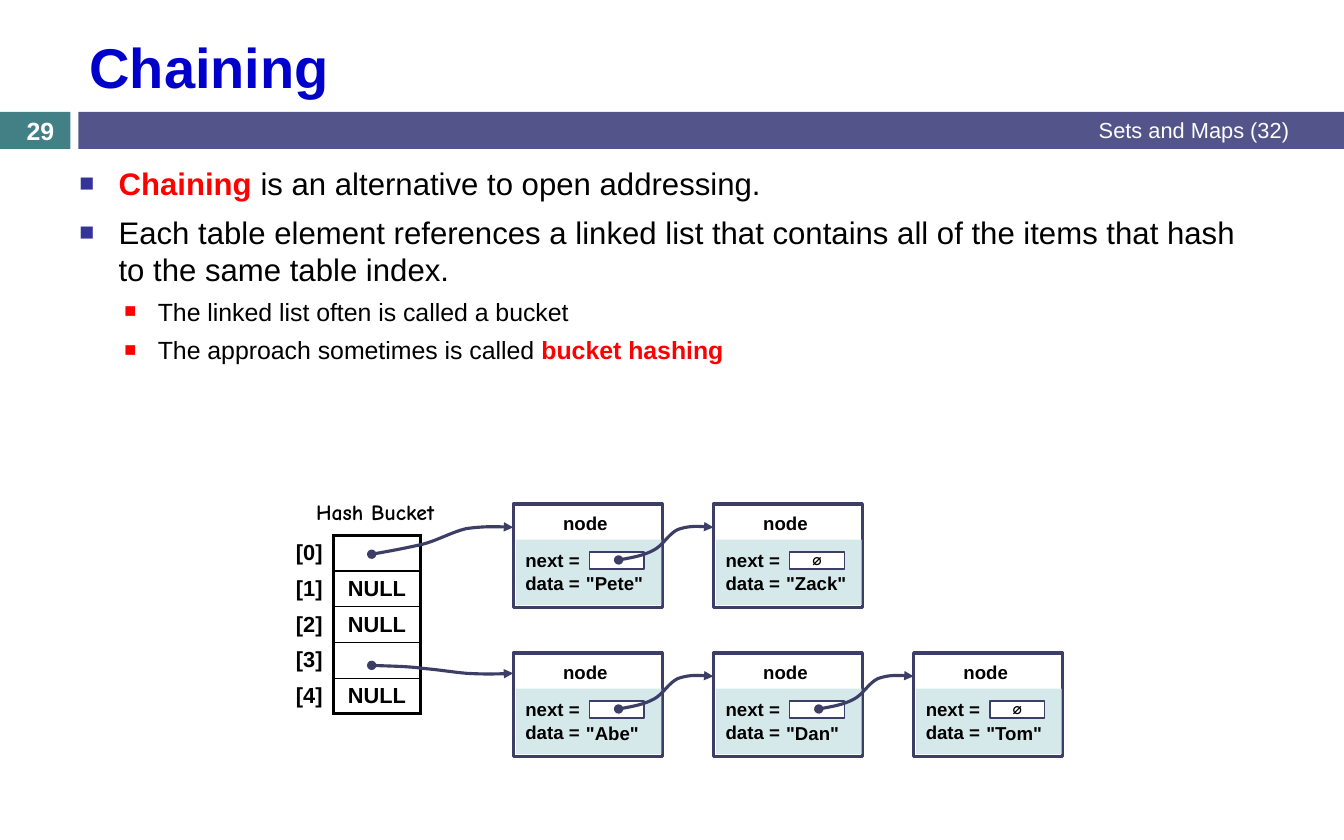
import pptx
import pptx.dml.color
import pptx.enum.shapes
import pptx.enum.text
import pptx.oxml
import pptx.oxml.ns
import pptx.util

Cm, Pt = pptx.util.Cm, pptx.util.Pt
color = pptx.dml.color.RGBColor.from_string
ALIGN = pptx.enum.text.PP_ALIGN
MIDDLE = pptx.enum.text.MSO_ANCHOR.MIDDLE
NS = pptx.oxml.ns.nsdecls("a")
INK = "3D3E66"


def write(paragraph, text, size=12, tint="000000", bold=True, font="Arial", align=None):
    run = paragraph.add_run()
    run.text = text
    run.font.size = Pt(size)
    run.font.bold = bold
    run.font.name = font
    run.font.color.rgb = color(tint)
    if align is not None:
        paragraph.alignment = align


def add_box(x, y, width, height, fill, border=None):
    box = slide.shapes.add_shape(pptx.enum.shapes.MSO_SHAPE.RECTANGLE,
                                 Cm(x), Cm(y), Cm(width), Cm(height))
    box.shadow.inherit = False
    box.fill.solid()
    box.fill.fore_color.rgb = color(fill)
    if border:
        box.line.color.rgb = color(INK)
        box.line.width = Pt(border)
    else:
        box.line.fill.background()


deck = pptx.Presentation()
deck.slide_width, deck.slide_height = Cm(30.48), Cm(19.05)
slide = deck.slides.add_slide(deck.slide_layouts[6])

# Header band
add_box(0, 2.54, 1.6, 0.84, "438086")
add_box(1.78, 2.54, 28.7, 0.84, "53548A")

# Bulleted text: level, then (text, highlighted) runs
bullets = [
    (0, [("Chaining ", True), ("is an alternative to open addressing.", False)]),
    (0, [("Each table element references a linked list that contains all of "
          "the items that hash to the same table index.", False)]),
    (1, [("The linked list often is called a bucket", False)]),
    (1, [("The approach sometimes is called ", False), ("bucket hashing", True)]),
]
# Per level: text size, space before, bullet colour, left margin, hanging indent
levels = [(20, 7, "333399", 0.89, 0.89), (16, 5.5, "FF0000", 1.78, 0.76)]
body = slide.shapes.add_textbox(Cm(1.55), Cm(3.61), Cm(27.23), Cm(5.28)).text_frame
body.word_wrap = True
for index, (level, runs) in enumerate(bullets):
    size, before, bullet_tint, margin, hanging = levels[level]
    point = body.add_paragraph() if index else body.paragraphs[0]
    point.level = level
    point.space_before = Pt(before)
    for text, highlighted in runs:
        write(point, text, size=size, bold=highlighted,
              tint="FF0000" if highlighted else "000000")
    properties = point._p.get_or_add_pPr()
    properties.set("marL", str(Cm(margin)))
    properties.set("indent", str(-Cm(hanging)))
    for xml in (f'<a:buClr {NS}><a:srgbClr val="{bullet_tint}"/></a:buClr>',
                f'<a:buSzPct {NS} val="80000"/>',
                f'<a:buFont {NS} typeface="Arial"/>',
                f'<a:buChar {NS} char="■"/>'):
        properties.append(pptx.oxml.parse_xml(xml))

# Hash table
slots = ["", "NULL", "NULL", "", "NULL"]
table = slide.shapes.add_table(5, 2, Cm(6.15), Cm(12.14), Cm(3.38), Cm(4.05)).table
table.first_row = table.horz_banding = False
table.columns[0].width, table.columns[1].width = Cm(1.42), Cm(1.96)
for row, slot in enumerate(slots):
    table.rows[row].height = Cm(0.81)
    top = 2.25 if row == 0 else 1
    bottom = 2.25 if row == len(slots) - 1 else 1
    columns = [(f"[{row}]", ALIGN.RIGHT, {"R": 2.25}),
               (slot, ALIGN.CENTER, {"L": 2.25, "R": 2.25, "T": top, "B": bottom})]
    for column, (text, align, borders) in enumerate(columns):
        cell = table.cell(row, column)
        cell.margin_top = cell.margin_bottom = 0
        cell.vertical_anchor = MIDDLE
        cell.fill.solid()
        cell.fill.fore_color.rgb = color("FFFFFF")
        if text:
            write(cell.text_frame.paragraphs[0], text, size=14, align=align)
        for position, (side, width) in enumerate(borders.items()):
            cell._tc.get_or_add_tcPr().insert(position, pptx.oxml.parse_xml(
                f'<a:ln{side} {NS} w="{Pt(width)}"><a:solidFill>'
                f'<a:srgbClr val="000000"/></a:solidFill></a:ln{side}>'))

# Labels: left, top, width, height, inset, text, format
labels = [
    (1.78, 0.48, 27.71, 2.03, 0.25, "Chaining", dict(size=36, tint="0000CC")),
    (11.43, 2.51, 18.06, 0.89, 0.25, "Sets and Maps (32)",
     dict(size=14, tint="FFFFFF", bold=False, align=ALIGN.RIGHT)),
    (0, 2.57, 1.83, 0.76, 0, "29", dict(size=16, tint="FFFFFF", align=ALIGN.CENTER)),
    (6.53, 11.18, 3.96, 0.86, 0.25, "Hash Bucket",
     dict(size=14, font="Comic Neue", align=ALIGN.CENTER)),
]

# Arrows from the table to the first node of each chain
bucket_xs = [8.43, 8.84, 9.25, 9.6, 9.96, 10.24, 10.57, 10.92, 11.28, 11.64]
arrows = [list(zip(bucket_xs, ys)) for ys in (
    [12.57, 12.5, 12.42, 12.34, 12.24, 12.07, 11.99, 11.94, 11.94, 11.96],
    [15.09, 15.11, 15.11, 15.16, 15.19, 15.24, 15.27, 15.29, 15.29, 15.27])]
# Curve from one node to the next, relative to the node's corner
link = [(2.39, 1.27), (2.67, 1.22), (2.95, 1.17), (3.18, 1.05), (3.4, 0.94),
        (3.51, 0.69), (3.73, 0.58), (3.96, 0.5), (4.24, 0.5), (4.54, 0.53)]

# Chains of nodes
for row, chain in enumerate([["Pete", "Zack"], ["Abe", "Dan", "Tom"]]):
    for column, item in enumerate(chain):
        x, y = 11.64 + 4.54 * column, 11.43 + 3.38 * row
        add_box(x, y, 3.38, 2.34, "FFFFFF", border=2)
        add_box(x + 0.06, y + 0.81, 3.3, 1.48, "D6E9EA")
        add_box(x + 1.73, y + 1.09, 1.24, 0.38, "FFFFFF", border=1)
        labels += [
            (x + 0.91, y + 0.18, 1.45, 0.51, 0, "node", dict(align=ALIGN.CENTER)),
            (x + 0.06, y + 1.02, 1.45, 1.02, 0, "next =\ndata =", dict(align=ALIGN.RIGHT)),
            (x + 1.65, y + 1.55, 1.45, 0.51, 0, f'"{item}"', {}),
        ]
        if item == chain[-1]:
            labels.append((x + 1.73, y + 1.03, 1.24, 0.5, 0, "∅",
                           dict(size=10, font="DejaVu Sans Mono", align=ALIGN.CENTER)))
        else:
            arrows.append([(x + dx, y + dy) for dx, dy in link])

for x, y, width, height, inset, text, style in labels:
    frame = slide.shapes.add_textbox(Cm(x), Cm(y), Cm(width), Cm(height)).text_frame
    frame.word_wrap = True
    frame.vertical_anchor = MIDDLE
    frame.margin_left = frame.margin_right = Cm(inset)
    frame.margin_top = frame.margin_bottom = 0
    for index, line in enumerate(text.split("\n")):
        write(frame.add_paragraph() if index else frame.paragraphs[0], line, **style)

# Curved arrows: every three points after the start form one Bézier segment
for points in arrows:
    start, *rest = [(Cm(x), Cm(y)) for x, y in points]
    builder = slide.shapes.build_freeform(*start)
    builder.add_line_segments(rest, close=False)
    arrow = builder.convert_to_shape()
    arrow.shadow.inherit = False
    arrow.fill.background()
    arrow.line.color.rgb = color(INK)
    arrow.line.width = Pt(2)
    steps = arrow._element.xpath(".//a:lnTo")
    for first in range(0, len(steps), 3):
        curve = pptx.oxml.parse_xml(f"<a:cubicBezTo {NS}/>")
        steps[first].addprevious(curve)
        for step in steps[first:first + 3]:
            curve.append(step[0])
            step.getparent().remove(step)
    outline = arrow.line._get_or_add_ln()
    outline.append(pptx.oxml.parse_xml(f'<a:headEnd {NS} type="oval"/>'))
    outline.append(pptx.oxml.parse_xml(f'<a:tailEnd {NS} type="triangle"/>'))

deck.save("out.pptx")
